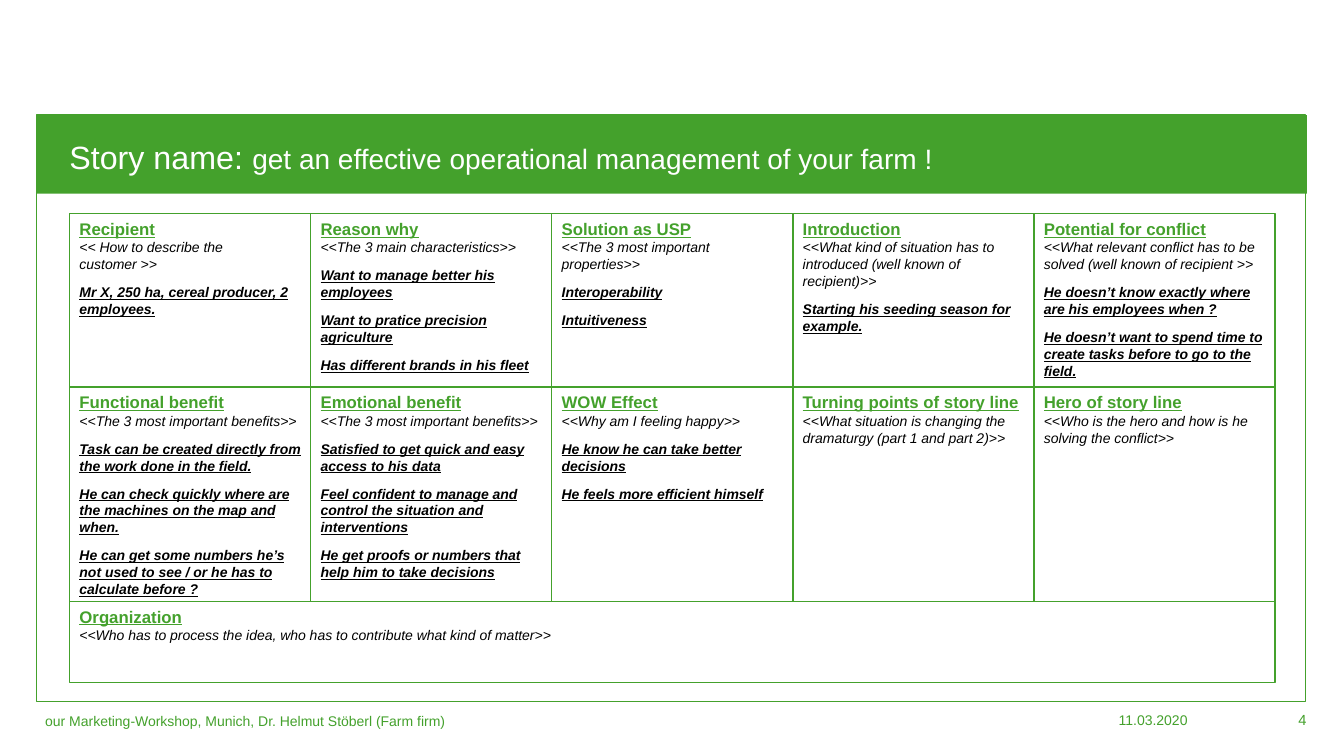
from copy import deepcopy
from dataclasses import dataclass

from pptx import Presentation
from pptx.dml.color import RGBColor
from pptx.enum.shapes import MSO_SHAPE
from pptx.enum.text import MSO_ANCHOR, PP_ALIGN
from pptx.util import Pt


@dataclass(frozen=True)
class Theme:
    font: str = "Arial"
    green: RGBColor = RGBColor(0x44, 0xA1, 0x2C)
    white: RGBColor = RGBColor(0xFF, 0xFF, 0xFF)
    black: RGBColor = RGBColor(0, 0, 0)
    title: float = 23
    subtitle: float = 20
    heading: float = 12
    body: float = 10
    number: float = 10.5
    gap: float = 8


THEME = Theme()

TOP_ROW = [
    ("Recipient", "<< How to describe the \ncustomer >>",
     ["Mr X, 250 ha, cereal producer, 2 employees."]),
    ("Reason why", "<<The 3 main characteristics>>",
     ["Want to manage better his employees",
      "Want to pratice precision agriculture",
      "Has different brands in his fleet"]),
    ("Solution as USP", "<<The 3 most important properties>>",
     ["Interoperability", "Intuitiveness"]),
    ("Introduction",
     "<<What kind of situation has to introduced (well known of recipient)>>",
     ["Starting his seeding season for example."]),
    ("Potential for conflict",
     "<<What relevant conflict has to be solved (well known of recipient >>",
     ["He doesn’t know exactly where are his employees when ?",
      "He doesn’t want to spend time to create tasks before to go to the field."]),
]
BOTTOM_ROW = [
    ("Functional benefit", "<<The 3 most important benefits>>",
     ["Task can be created directly from the work done in the field.",
      "He can check quickly where are the machines on the map and when.",
      "He can get some numbers he’s not used to see / or he has to calculate before ?"]),
    ("Emotional benefit", "<<The 3 most important benefits>>",
     ["Satisfied to get quick and easy access to his data",
      "Feel confident to manage and control the situation and interventions",
      "He get proofs or numbers that help him to take decisions"]),
    ("WOW Effect", "<<Why am I feeling happy>>",
     ["He know he can take better decisions", "He feels more efficient himself"]),
    ("Turning points of story line",
     "<<What situation is changing the dramaturgy (part 1 and part 2)>>", []),
    ("Hero of story line",
     "<<Who is the hero and how is he solving the conflict>>", []),
]
ORGANIZATION = (
    "Organization",
    "<<Who has to process the idea, who has to contribute what kind of matter>>", [])


def write(para, text, size=THEME.body, color=THEME.black, bold=False,
          italic=False, underline=False):
    for index, line in enumerate(text.split("\n")):
        if index:
            para.add_line_break()
            para._p[-1].append(deepcopy(span._r.rPr))
        span = para.add_run()
        span.font.name = THEME.font
        span.font.size = Pt(size)
        span.font.color.rgb = color
        span.font.bold = bold
        span.font.italic = italic
        span.font.underline = underline
        if line:
            span.text = line
        else:
            para._p.remove(span._r)


def add_rectangle(page, box, fill=None, line=None):
    shape = page.shapes.add_shape(MSO_SHAPE.RECTANGLE, *map(Pt, box))
    shape.shadow.inherit = False
    if fill is None:
        shape.fill.background()
    else:
        shape.fill.solid()
        shape.fill.fore_color.rgb = fill
    if line is None:
        shape.line.fill.background()
    else:
        shape.line.color.rgb = line
        shape.line.width = Pt(1)
    return shape


def add_text_box(page, box, inset=True, wrap=True, align=PP_ALIGN.LEFT):
    frame = page.shapes.add_textbox(*map(Pt, box)).text_frame
    frame.word_wrap = wrap
    frame.vertical_anchor = MSO_ANCHOR.MIDDLE
    if not inset:
        frame.margin_left = frame.margin_right = 0
        frame.margin_top = frame.margin_bottom = 0
    para = frame.paragraphs[0]
    para.alignment = align
    return para


def add_header(page, box):
    left, top, width, height = box
    add_rectangle(page, box, fill=THEME.green)
    para = add_text_box(page, (left + 23, top + 18.5, 620.6, 25.2),
                        inset=False, wrap=False)
    para.line_spacing = 0.9
    write(para, "Story name: ", size=THEME.title, color=THEME.white)
    write(para, "get an effective operational management of your farm !",
          size=THEME.subtitle, color=THEME.white)


def add_cell(page, box, content):
    heading, hint, answers = content
    frame = add_rectangle(page, box, line=THEME.green).text_frame
    frame.word_wrap = True
    frame.vertical_anchor = MSO_ANCHOR.TOP
    para = frame.paragraphs[0]
    para.alignment = PP_ALIGN.LEFT
    write(para, heading + "\n", size=THEME.heading, color=THEME.green,
          bold=True, underline=True)
    write(para, hint, italic=True)
    for answer in answers:
        para = frame.add_paragraph()
        para.alignment = PP_ALIGN.LEFT
        para.space_before = Pt(THEME.gap)
        write(para, answer, bold=True, italic=True, underline=True)


def add_story_grid(page, box):
    left, top, width, height = box
    column = width / len(TOP_ROW)
    row_top = top
    for row, row_height in ((TOP_ROW, 123.8), (BOTTOM_ROW, 153)):
        for index, content in enumerate(row):
            cell = (left + index * column, row_top, column, row_height)
            add_cell(page, cell, content)
        row_top += row_height
    add_cell(page, (left, row_top, width, top + height - row_top), ORGANIZATION)


def add_footer(page, box):
    left, top, width, height = box
    right = left + width
    para = add_text_box(page, (left, top, 720.7, height))
    write(para, "our Marketing-Workshop, Munich, Dr. Helmut Stöberl (Farm firm)",
          color=THEME.green)
    for text, size, end, span_width in (
            ("11.03.2020", THEME.body, right - 85, 276.5),
            ("4", THEME.number, right, 75)):
        para = add_text_box(page, (end - span_width, top + 7.6, span_width, 12.6),
                            inset=False, align=PP_ALIGN.RIGHT)
        write(para, text, size=size, color=THEME.green)


def main():
    deck = Presentation()
    deck.slide_width, deck.slide_height = Pt(960), Pt(540)
    page = deck.slides.add_slide(deck.slide_layouts[6])
    add_rectangle(page, (26, 82.2, 906.7, 419), fill=THEME.white, line=THEME.green)
    add_header(page, (26.6, 82.2, 907, 56.2))
    add_story_grid(page, (49.7, 152.7, 861, 335))
    add_footer(page, (25.2, 500.4, 908, 28.8))
    deck.save("out.pptx")


if __name__ == "__main__":
    main()
